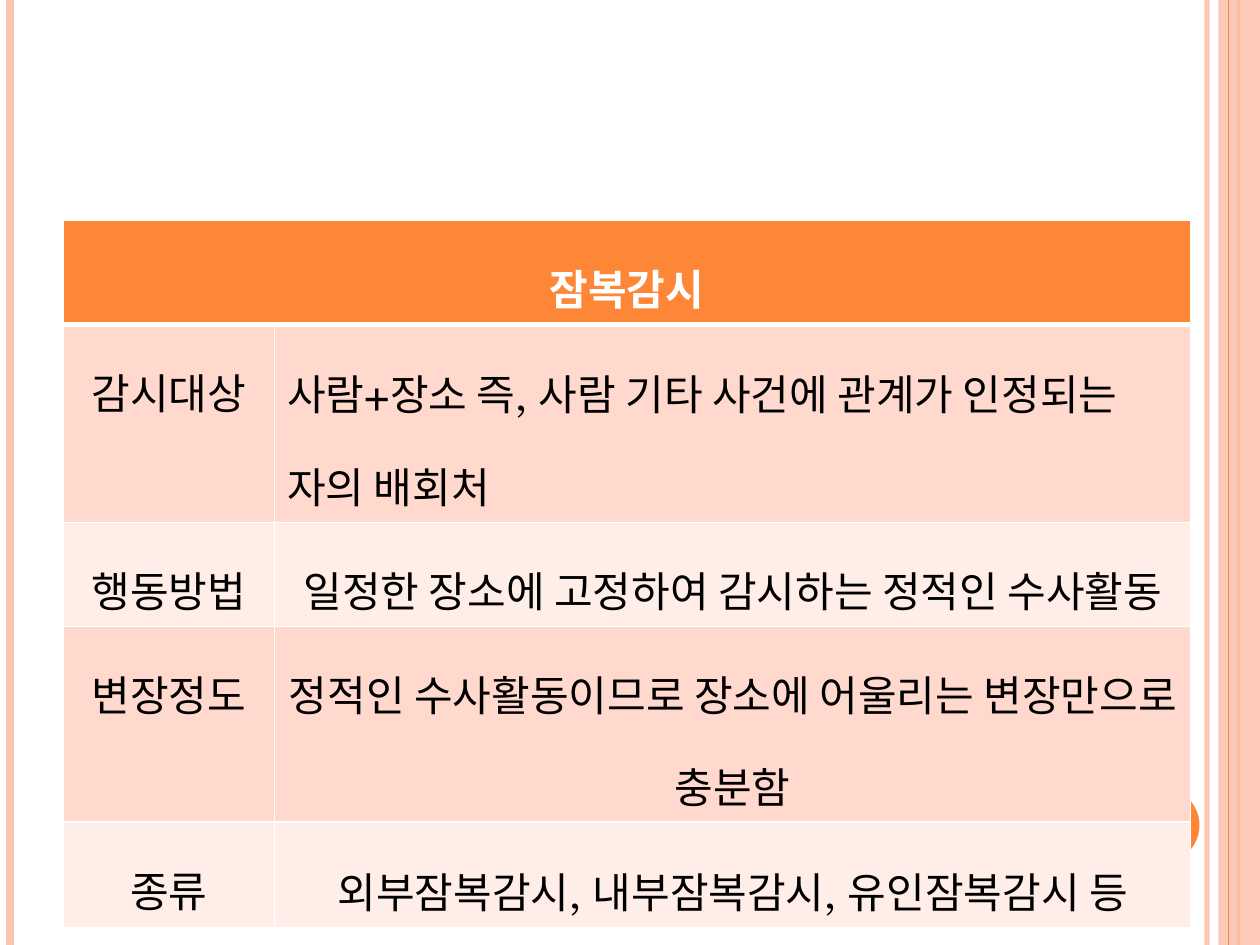
import pptx
import pptx.dml.color
import pptx.enum.shapes
import pptx.enum.text
import pptx.oxml
import pptx.oxml.ns
import pptx.util
from lxml import etree

Inches, Pt = pptx.util.Inches, pptx.util.Pt
RGB = pptx.dml.color.RGBColor.from_string
SHAPE = pptx.enum.shapes.MSO_SHAPE
ALIGN = pptx.enum.text.PP_ALIGN
qn = pptx.oxml.ns.qn

# Content
HEADING = "잠복감시"
ROWS = [
    ("감시대상", "사람+장소 즉, 사람 기타 사건에 관계가 인정되는 자의 배회처", ALIGN.LEFT),
    ("행동방법", "일정한 장소에 고정하여 감시하는 정적인 수사활동", ALIGN.CENTER),
    ("변장정도", "정적인 수사활동이므로 장소에 어울리는 변장만으로 충분함", ALIGN.CENTER),
    ("종류", "외부잠복감시, 내부잠복감시, 유인잠복감시 등", ALIGN.CENTER),
]

# Theme
THEME = {
    "font": "TeX Gyre Schola", "size": 24, "spacing": 1.5,
    "accent": "FE8637", "soft": "FEC3AE", "white": "FFFFFF", "text": "000000",
    "bands": ("FFD9CE", "FFEDE8"),
    "border": 1, "heading_border": 3,
}

# Layout in inches
SLIDE_W, SLIDE_H = 10, 7.5
TABLE_LEFT, TABLE_TOP = 0.5, 1.75
COLUMN_WIDTHS = (1.68, 7.27)
ROW_HEIGHT = 0.41

# Decoration from back to front: (kind, colour, opacity %, geometry)
# rule: x, weight in points; other shapes: left, top, width, height
DECORATION = [
    ("rule", "soft", 93, (9.58, 3)),
    ("rule", "soft", 100, (0.08, 4.5)),
    ("rule", "accent", 100, (9.83, 1.5)),
    (SHAPE.RECTANGLE, "soft", 87, (9.67, 0, 0.33, SLIDE_H)),
    ("rule", "accent", 100, (9.75, 0.75)),
    (SHAPE.OVAL, "accent", 100, (8.92, 6.25, 0.6, 0.6)),
]


def set_opacity(part, percent):
    if percent < 100:
        color = next(part._element.spPr.iter(qn("a:srgbClr")))
        etree.SubElement(color, qn("a:alpha"), val=str(percent * 1000))


def add_rule(slide, color, x, weight):
    rule = slide.shapes.add_connector(
        pptx.enum.shapes.MSO_CONNECTOR.STRAIGHT,
        Inches(x), 0, Inches(x), Inches(SLIDE_H))
    rule.line.color.rgb = RGB(color)
    rule.line.width = Pt(weight)
    etree.SubElement(rule._element.spPr, qn("a:effectLst"))
    return rule


def add_block(slide, kind, color, box):
    block = slide.shapes.add_shape(kind, *map(Inches, box))
    block.shadow.inherit = False
    block.fill.solid()
    block.fill.fore_color.rgb = RGB(color)
    block.line.fill.background()
    return block


def set_borders(cell, widths):
    properties = cell._tc.get_or_add_tcPr()
    for side, width in widths.items():
        border = etree.SubElement(properties, qn(f"a:ln{side}"), w=str(Pt(width)))
        fill = etree.SubElement(border, qn("a:solidFill"))
        etree.SubElement(fill, qn("a:srgbClr"), val=THEME["white"])


def fill_cell(cell, text, align, fill, color, bold):
    cell.fill.solid()
    cell.fill.fore_color.rgb = RGB(fill)
    paragraph = cell.text_frame.paragraphs[0]
    paragraph.alignment = align
    paragraph.line_spacing = THEME["spacing"]
    run = paragraph.add_run()
    run.text = text
    font_format = {"name": THEME["font"], "size": Pt(THEME["size"]), "bold": bold}
    for attribute, value in font_format.items():
        setattr(run.font, attribute, value)
    run.font.color.rgb = RGB(color)


def add_surveillance_table(slide):
    row_count = len(ROWS) + 1
    table = slide.shapes.add_table(
        row_count, len(COLUMN_WIDTHS), Inches(TABLE_LEFT), Inches(TABLE_TOP),
        Inches(sum(COLUMN_WIDTHS)), Inches(ROW_HEIGHT * row_count)).table
    table.horz_banding = False
    for column, width in zip(table.columns, COLUMN_WIDTHS):
        column.width = Inches(width)

    # Borders, with a thicker one under the heading
    thin, thick = THEME["border"], THEME["heading_border"]
    for index, row in enumerate(table.rows):
        row.height = Inches(ROW_HEIGHT)
        for cell in row.cells:
            set_borders(cell, {"L": thin, "R": thin,
                               "T": thick if index == 1 else thin,
                               "B": thick if index == 0 else thin})

    # Heading across both columns, then banded rows
    heading = table.cell(0, 0)
    heading.merge(table.cell(0, 1))
    fill_cell(heading, HEADING, ALIGN.CENTER, THEME["accent"], THEME["white"], True)
    for index, (label, detail, align) in enumerate(ROWS):
        band = THEME["bands"][index % 2]
        for column, (text, side) in enumerate(((label, ALIGN.CENTER), (detail, align))):
            fill_cell(table.cell(index + 1, column), text, side, band, THEME["text"], False)


def main():
    deck = pptx.Presentation()
    deck.slide_width, deck.slide_height = Inches(SLIDE_W), Inches(SLIDE_H)
    slide = deck.slides.add_slide(deck.slide_layouts[6])
    slide.background.fill.solid()
    slide.background.fill.fore_color.rgb = RGB(THEME["white"])

    for kind, color, opacity, geometry in DECORATION:
        if kind == "rule":
            part = add_rule(slide, THEME[color], *geometry)
        else:
            part = add_block(slide, kind, THEME[color], geometry)
        set_opacity(part, opacity)

    add_surveillance_table(slide)
    deck.save("out.pptx")


if __name__ == "__main__":
    main()
